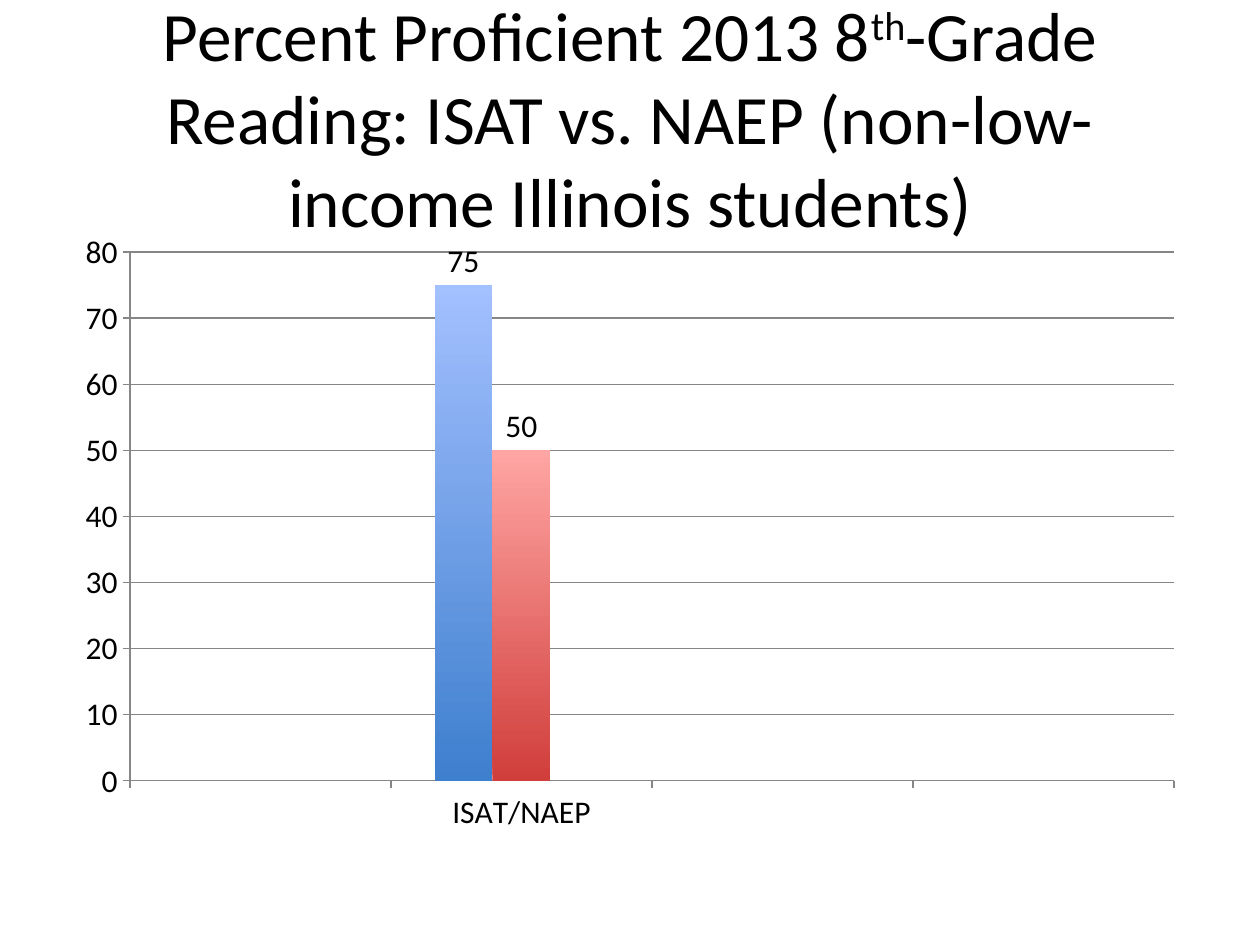
from lxml import etree
from pptx import Presentation
from pptx.chart.data import CategoryChartData
from pptx.dml.color import RGBColor
from pptx.enum.chart import XL_CHART_TYPE, XL_LABEL_POSITION as LabelPos, XL_TICK_MARK as Tick
from pptx.enum.text import MSO_ANCHOR, PP_ALIGN
from pptx.oxml.ns import qn
from pptx.util import Pt

PX = 914400 // 126
FONT = "Calibri"
COLORS = {"text": "000000", "line": "868686"}

# text, superscript
TITLE = [
    ("Percent Proficient 2013 8", False),
    ("th", True),
    ("-Grade Reading: ISAT vs. NAEP (non-low-income Illinois students)", False),
]
TITLE_BOX = (63, 38, 1134, 157)
CHART_BOX = (63, 220, 1134, 624)
PLOT_BOX = (130, 252, 1044, 529)

CATEGORIES = ["", "ISAT/NAEP", "", ""]
# name, values, bottom colour, top colour
SERIES = [
    ("Series 1", [None, 75, None, None], "3E7FCE", "A3C0FF"),
    ("Series 2", [None, 50, None, None], "D03E3B", "FFA5A3"),
    ("Series 3", [None] * 4, "9BBB59", "DAFDA7"),
]


def rgb(value):
    return RGBColor.from_string(value)


def emu(box):
    return [v * PX for v in box]


def style_font(font, size):
    font.name, font.size = FONT, Pt(size)
    font.color.rgb = rgb(COLORS["text"])


def style_line(line):
    line.color.rgb = rgb(COLORS["line"])
    line.width = Pt(0.75)


def add_title(slide):
    tf = slide.shapes.add_textbox(*emu(TITLE_BOX)).text_frame
    tf.word_wrap = True
    tf.vertical_anchor = MSO_ANCHOR.MIDDLE
    p = tf.paragraphs[0]
    p.alignment = PP_ALIGN.CENTER
    for text, raised in TITLE:
        r = p.add_run()
        r.text = text
        style_font(r.font, 39.6)
        if raised:
            r.font._element.set("baseline", "30000")


def place_plot(chart):
    """Fix the inner plot area as fractions of the chart frame."""
    plot_area = chart._chartSpace.chart.plotArea
    for old in plot_area.findall(qn("c:layout")):
        plot_area.remove(old)
    layout = etree.Element(qn("c:layout"))
    manual = etree.SubElement(layout, qn("c:manualLayout"))
    left, top, width, height = CHART_BOX
    x, y, w, h = PLOT_BOX
    settings = [
        ("layoutTarget", "inner"), ("xMode", "edge"), ("yMode", "edge"),
        ("x", (x - left) / width), ("y", (y - top) / height),
        ("w", w / width), ("h", h / height),
    ]
    for tag, value in settings:
        etree.SubElement(manual, qn(f"c:{tag}")).set("val", str(value))
    plot_area.insert(0, layout)


def add_chart(slide):
    data = CategoryChartData()
    data.categories = CATEGORIES
    for name, values, *_ in SERIES:
        data.add_series(name, values)
    chart = slide.shapes.add_chart(
        XL_CHART_TYPE.COLUMN_CLUSTERED, *emu(CHART_BOX), data).chart
    chart.has_legend = chart.has_title = False
    style_font(chart.font, 18)
    place_plot(chart)

    for axis in (chart.category_axis, chart.value_axis):
        axis.major_tick_mark, axis.minor_tick_mark = Tick.OUTSIDE, Tick.NONE
        style_line(axis.format.line)
    axis = chart.value_axis
    axis.minimum_scale, axis.maximum_scale, axis.major_unit = 0, 80, 10
    axis.has_major_gridlines = True
    style_line(axis.major_gridlines.format.line)

    plot = chart.plots[0]
    plot.gap_width, plot.overlap = 150, 0
    plot.vary_by_categories = False
    for series, (_, _, *shades) in zip(plot.series, SERIES):
        series.invert_if_negative = False
        fill = series.format.fill
        fill.gradient()
        fill.gradient_angle = 90
        for stop, shade in zip(fill.gradient_stops, shades):
            stop.color.rgb = rgb(shade)
        labels = series.data_labels
        labels.show_value = True
        labels.position = LabelPos.OUTSIDE_END
        style_font(labels.font, 18)


def main():
    prs = Presentation()
    prs.slide_width, prs.slide_height = 1260 * PX, 945 * PX
    slide = prs.slides.add_slide(prs.slide_layouts[6])
    add_title(slide)
    add_chart(slide)
    prs.save("out.pptx")


if __name__ == "__main__":
    main()
